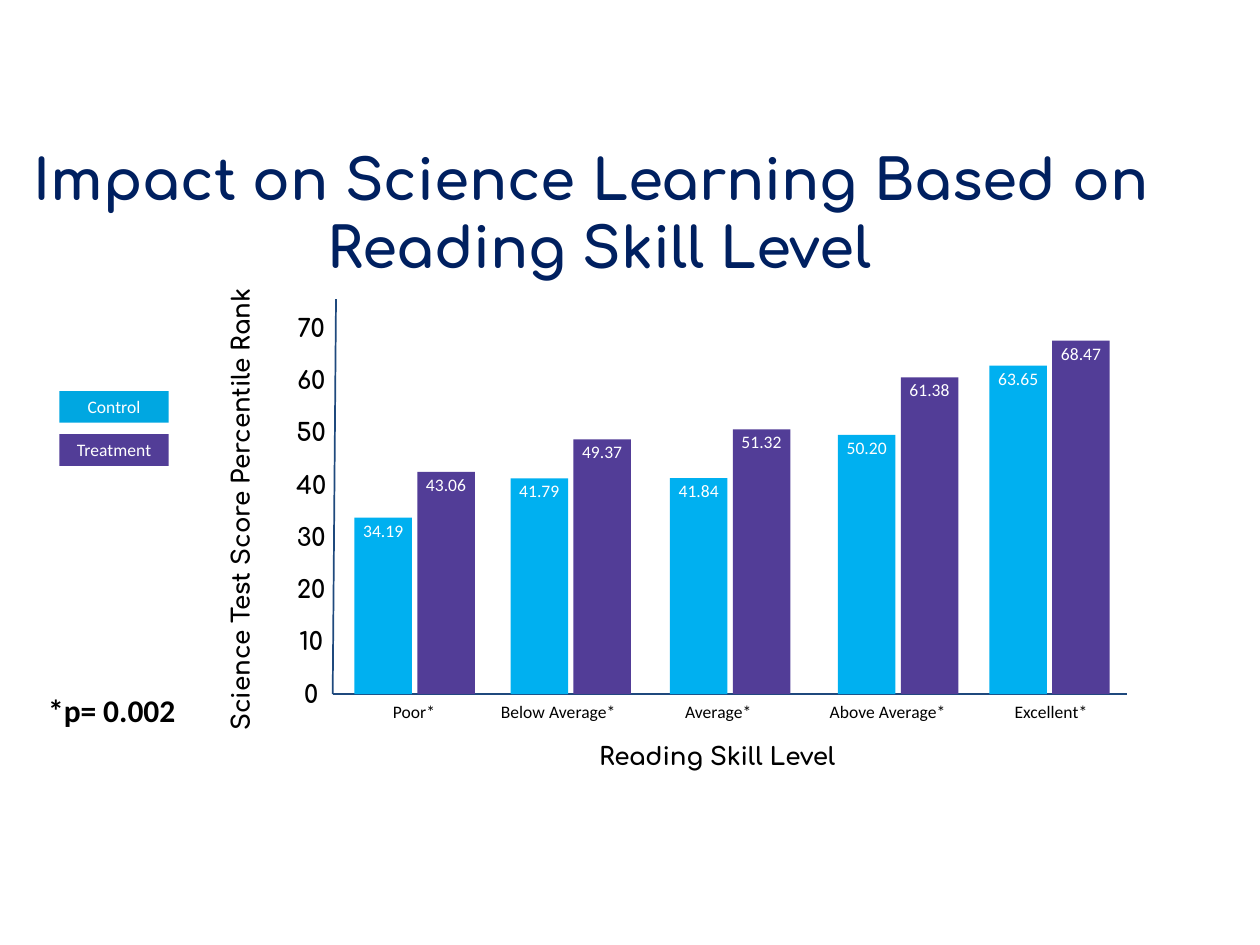
"""Build the slide on science learning by reading skill level."""
from dataclasses import dataclass

from lxml.etree import SubElement
from pptx import Presentation
from pptx.dml.color import RGBColor as Rgb
from pptx.enum.shapes import MSO_CONNECTOR as Connector, MSO_SHAPE as Preset
from pptx.enum.text import MSO_ANCHOR as Anchor, PP_ALIGN as Align
from pptx.oxml.ns import qn
from pptx.util import Cm, Pt


@dataclass(frozen=True)
class Theme:
    navy: Rgb = Rgb(0x00, 0x20, 0x60)
    axis: Rgb = Rgb(0x1F, 0x49, 0x7D)
    control: Rgb = Rgb(0x00, 0xB0, 0xF0)
    control_key: Rgb = Rgb(0x00, 0xA7, 0xE1)
    treatment: Rgb = Rgb(0x52, 0x3D, 0x97)
    black: Rgb = Rgb(0x00, 0x00, 0x00)
    white: Rgb = Rgb(0xFF, 0xFF, 0xFF)
    heading: str = "Comfortaa"
    body: str = "Calibri"
    title_size: Pt = Pt(24)
    note_size: Pt = Pt(13.5)
    axis_size: Pt = Pt(10.5)
    label_size: Pt = Pt(7.5)


theme = Theme()
title_font = dict(name=theme.heading, size=theme.title_size, bold=True)
axis_font = dict(name=theme.heading, size=theme.axis_size, bold=True)
note_font = dict(name=theme.body, size=theme.note_size, bold=True)
label_font = dict(name=theme.body, size=theme.label_size, bold=False)

inset = Cm(0.18)
frame_format = dict(word_wrap=True, margin_left=inset, margin_right=inset,
                    margin_top=inset, margin_bottom=inset)

deck = Presentation()
deck.slide_width, deck.slide_height = Cm(19.05), Cm(14.28)
slide = deck.slides.add_slide(deck.slide_layouts[6])


def write(text, box, font_format, color, anchor=Anchor.MIDDLE):
    label = slide.shapes.add_textbox(*map(Cm, box))
    frame = label.text_frame
    for name, value in dict(frame_format, vertical_anchor=anchor).items():
        setattr(frame, name, value)
    frame.text = text
    for paragraph in frame.paragraphs:
        paragraph.alignment = Align.CENTER
        paragraph.font.color.rgb = color
        for name, value in font_format.items():
            setattr(paragraph.font, name, value)
    return label


def block(box, color):
    bar = slide.shapes.add_shape(Preset.RECTANGLE, *map(Cm, box))
    bar.shadow.inherit = False
    bar.fill.solid()
    bar.fill.fore_color.rgb = color
    bar.line.fill.background()


write("Impact on Science Learning Based on \nReading Skill Level",
      (0.08, 2.01, 17.96, 1.63), title_font, theme.navy, Anchor.TOP)

baseline = 10.49
axis_left = 5.03
for end_x, end_y in ((17.04, baseline), (5.08, 4.52)):
    axis = slide.shapes.add_connector(
        Connector.STRAIGHT, *map(Cm, (axis_left, baseline, end_x, end_y)))
    axis.line.color.rgb = theme.axis
    axis.line.width = Pt(0.75)
    SubElement(axis._element.spPr, qn("a:effectLst"))

tick_step = 0.79
for step in range(8):
    write(str(step * 10), (4.11, 10.24 - step * tick_step, 1.19, 0.48),
          axis_font, theme.black)

cm_per_point = 0.078
bar_width = 0.87
treatment_offset = 0.95
score_width = 1.02
skill_levels = (
    ("Poor*", 5.03, 5.36, 34.19, 43.06),
    ("Below Average*", 7.21, 7.72, 41.79, 49.37),
    ("Average*", 9.63, 10.13, 41.84, 51.32),
    ("Above Average*", 12.19, 12.67, 50.20, 61.38),
    ("Excellent*", 14.66, 14.96, 63.65, 68.47),
)
for level, level_left, bars_left, control, treatment in skill_levels:
    write(level, (level_left, 10.59, 2.46, 0.33), label_font, theme.black)
    for score, left, color in (
        (control, bars_left, theme.control),
        (treatment, bars_left + treatment_offset, theme.treatment),
    ):
        height = score * cm_per_point
        top = baseline - height
        block((left, top, bar_width, height), color)
        score_left = left + (bar_width - score_width) / 2
        write(f"{score:.2f}", (score_left, top, score_width, 0.38),
              label_font, theme.white)

for series, top, color in (("Control", 5.91, theme.control_key),
                           ("Treatment", 6.56, theme.treatment)):
    key_box = (0.9, top, 1.65, 0.48)
    block(key_box, color)
    write(series, key_box, label_font, theme.white)

write("Reading Skill Level", (8, 11.02, 5.69, 0.91), axis_font, theme.black,
      Anchor.TOP)
score_axis_title = write("Science Test Score Percentile Rank",
                         (0.02, 7.28, 7.22, 0.84), axis_font, theme.black)
score_axis_title.rotation = 270
write("*p= 0.002", (0.51, 10.26, 2.36, 0.99), note_font, theme.black,
      Anchor.TOP)

deck.save("out.pptx")
